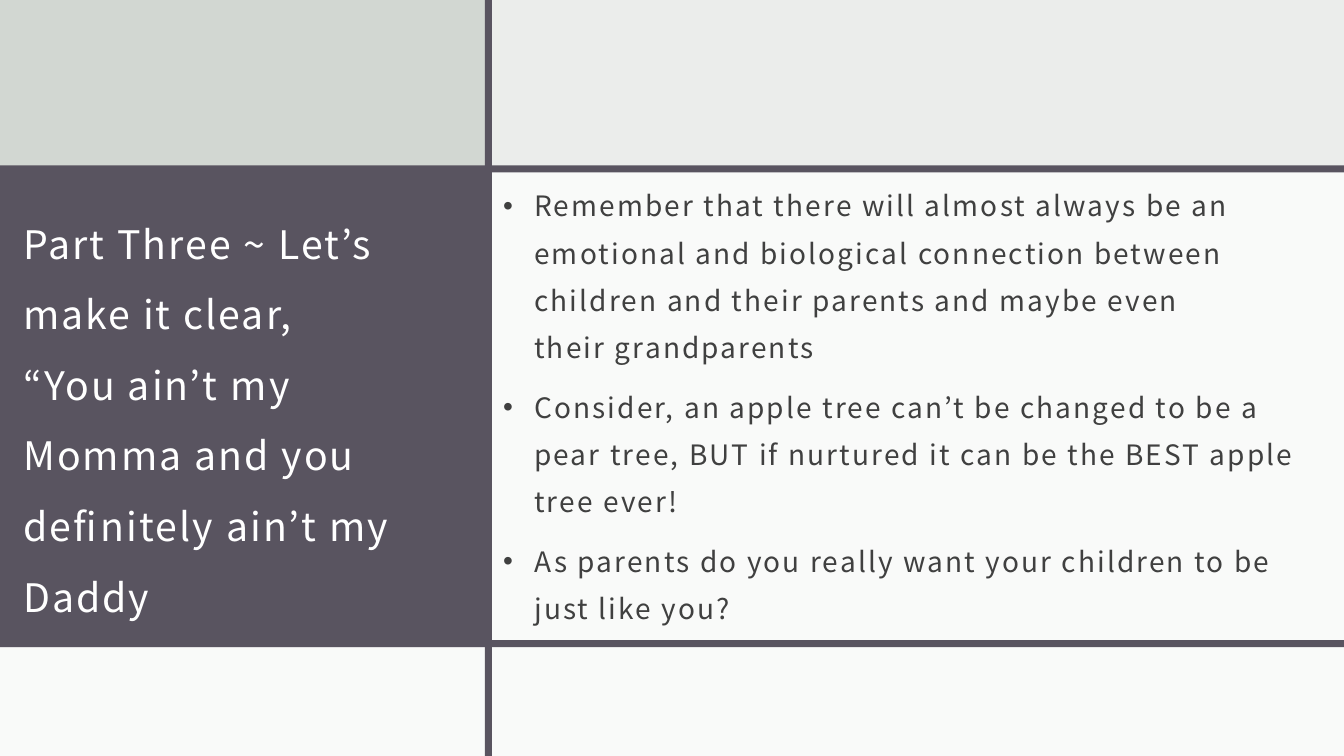
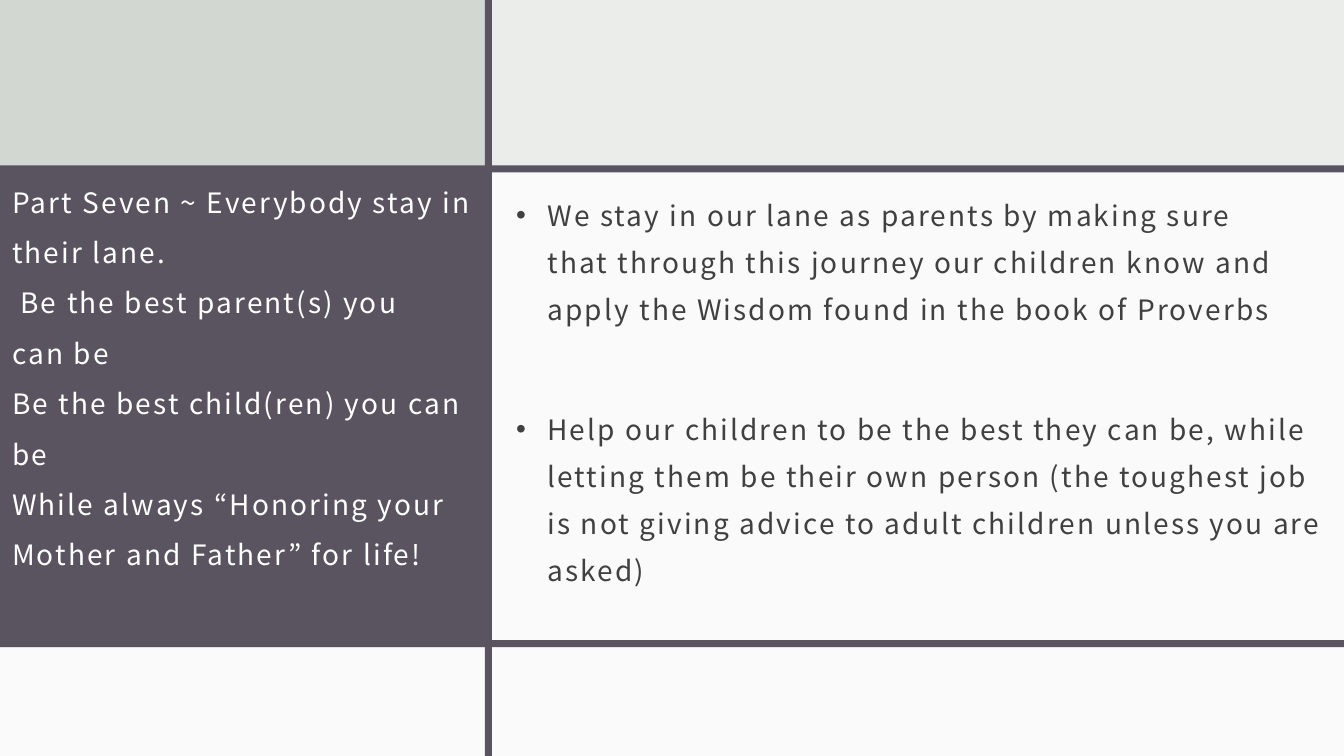
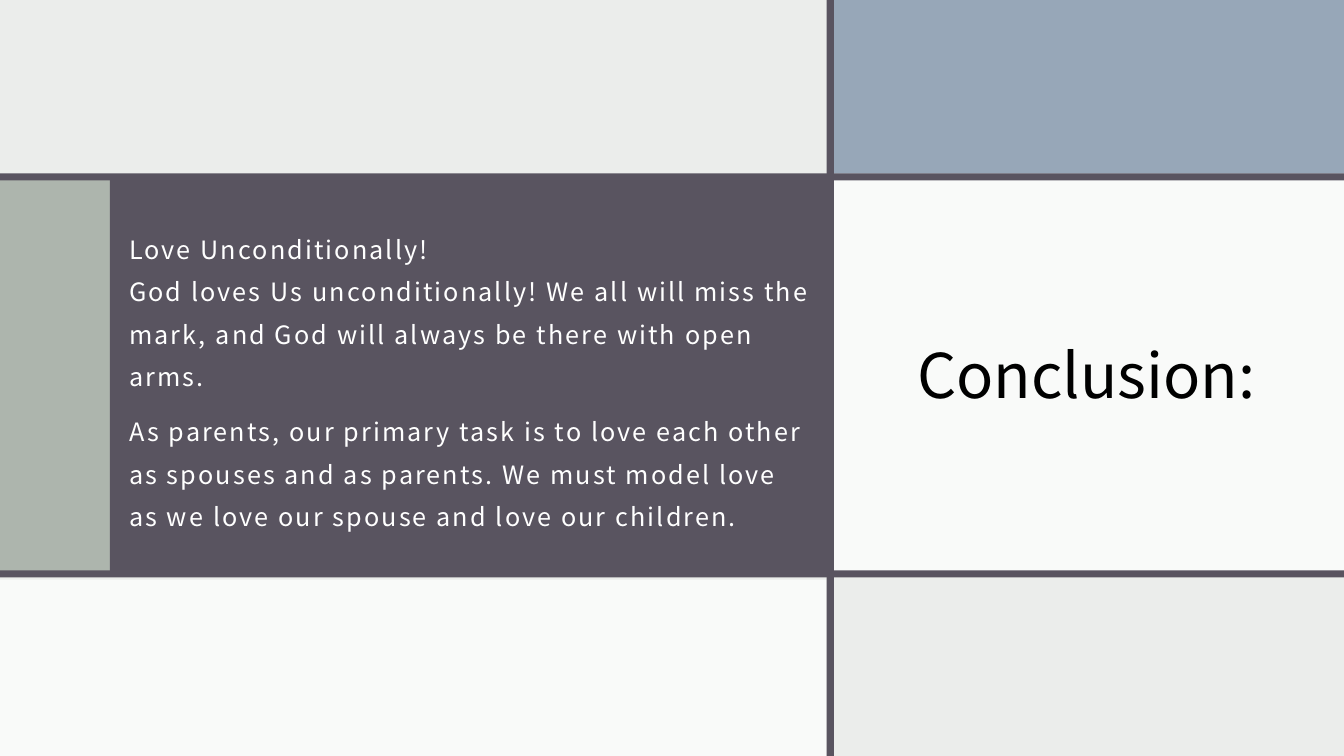
from lxml.etree import SubElement
from pptx import Presentation
from pptx.dml.color import RGBColor
from pptx.enum.shapes import MSO_SHAPE
from pptx.enum.text import MSO_ANCHOR, MSO_AUTO_SIZE, PP_ALIGN
from pptx.oxml.ns import qn
from pptx.util import Inches, Pt

FONT = "Noto Sans CJK JP"
PLUM = RGBColor(0x59, 0x54, 0x60)
MIST = RGBColor(0xEB, 0xED, 0xEB)
PALE = RGBColor(0xD2, 0xD7, 0xD2)
SAGE = RGBColor(0xAD, 0xB5, 0xAD)
BLUE = RGBColor(0x97, 0xA7, 0xB8)
WHITE = RGBColor(0xFF, 0xFF, 0xFF)
GREY = RGBColor(0x40, 0x40, 0x40)
BLACK = RGBColor(0, 0, 0)

WIDE, HIGH, RULE = 13.33, 7.5, 0.07
TIE = "_"  # stands for a no-break space in the wording below

# Each panel: left, top, width, height, colour, opacity in percent
TOPIC = dict(
    panels=[
        (0, 1.64, 4.84, 4.78, PLUM, 100),
        (0, 0, 4.84, 1.66, PALE, 100),
        (4.84, 1.66, 8.49, 4.76, WHITE, 75),
        (0, 6.41, WIDE, 1.09, WHITE, 75),
    ],
    rows=(1.64, 6.35), col=4.81,
)
CLOSE = dict(
    panels=[
        (0, 1.77, 1.09, 3.91, SAGE, 100),
        (1.09, 1.77, 7.16, 3.91, PLUM, 100),
        (8.24, 0, 5.09, 1.78, BLUE, 100),
        (8.27, 1.72, 5.06, 3.98, WHITE, 75),
        (0, 5.75, 8.2, 1.75, WHITE, 75),
    ],
    rows=(1.72, 5.66), col=8.2,
)

SLIDES = [
    dict(
        frame=TOPIC,
        title=["Part Three ~ Let’s make it clear, “You_ain’t_my Momma_and you "
               "definitely_ain’t_my Daddy"],
        place=(0.11, 1.73, 4.61, 4.62), size=28, lead=1.5, before=0,
        points=[
            "Remember that there will almost always be an emotional and "
            "biological connection between children and their parents and "
            "maybe even their_grandparents",
            "Consider, an apple tree can’t be changed to be a pear tree, BUT "
            "if nurtured it can be the BEST apple tree ever!",
            "As parents do you really want your children to be just like you?",
        ],
        body=(4.87, 1.65, 8.37, 4.62), gap=9.3,
    ),
    dict(
        frame=TOPIC,
        title=["Part Seven ~ Everybody stay in their lane.",
               "_Be the best parent(s) you can_be",
               "Be the best child(ren) you can be",
               "While always “Honoring your Mother and Father” for life!"],
        place=(0, 1.5, 4.85, 4.32), size=20, lead=1.5, before=0,
        points=[
            "We stay in our lane as parents by making sure that_through_this "
            "journey our children know and apply the Wisdom found in the book "
            "of Proverbs",
            "Help our children to be the best they can be, while letting "
            "them_be their own person (the toughest job is_not_giving advice "
            "to adult children unless you are asked)",
        ],
        body=(5, 0.83, 8.4, 5.98), gap=52,
    ),
    dict(
        frame=CLOSE,
        title=["Love_Unconditionally! God_loves_Us_unconditionally! We all "
               "will miss the mark, and God will always be there with open "
               "arms.",
               "As parents, our primary task is to love each other as spouses "
               "and as parents. We must model love as_we_love our spouse and "
               "love our children."],
        place=(1.16, 1.88, 7.2, 3.7), size=18, lead=1.4, before=9.3,
        label="Conclusion:", spot=(9, 3.29, 3.83, 0.84),
    ),
]


def block(slide, left, top, width, height, color, alpha=100):
    shape = slide.shapes.add_shape(
        MSO_SHAPE.RECTANGLE, *map(Inches, (left, top, width, height)))
    shape.shadow.inherit = False
    shape.fill.solid()
    shape.fill.fore_color.rgb = color
    shape.line.fill.background()
    if alpha < 100:
        tint = shape.element.find(".//" + qn("a:srgbClr"))
        SubElement(tint, qn("a:alpha")).set("val", str(alpha * 1000))


def style(para, size, color, track=0):
    para.alignment = PP_ALIGN.LEFT
    for run in para.runs:
        run.font.name = FONT
        run.font.size = Pt(size)
        run.font.color.rgb = color
        if track:
            run.font._element.set("spc", str(int(track * 100)))


def fill(shape, lines, size, color, lead, before):
    """Set spaced paragraphs in a middle-anchored text frame."""
    frame = shape.text_frame
    frame.word_wrap = True
    frame.auto_size = MSO_AUTO_SIZE.NONE
    frame.vertical_anchor = MSO_ANCHOR.MIDDLE
    frame.margin_left = frame.margin_right = frame.margin_top = Inches(0.12)
    frame.margin_bottom = Inches(0.1)
    frame.text = "\n".join(lines).replace(TIE, chr(160))
    for para in frame.paragraphs:
        para.line_spacing = lead
        para.space_before = Pt(before)
        style(para, size, color, 1.5)


def bullet(para):
    props = para._p.get_or_add_pPr()
    props.set("marL", str(Inches(0.31)))
    props.set("indent", str(-Inches(0.31)))
    SubElement(props, qn("a:buFont")).set("typeface", "Arial")
    SubElement(props, qn("a:buChar")).set("char", "•")


def backdrop(slide, frame):
    slide.background.fill.solid()
    slide.background.fill.fore_color.rgb = MIST
    for panel in frame["panels"]:
        block(slide, *panel)
    for top in frame["rows"]:
        block(slide, 0, top, WIDE, RULE, PLUM)
    block(slide, frame["col"], 0, RULE, HIGH, PLUM)


def heading(slide, item):
    title = slide.shapes.title
    title.left, title.top, title.width, title.height = map(
        Inches, item["place"])
    fill(title, item["title"], item["size"], WHITE, item["lead"],
         item["before"])
    title.element.getparent().append(title.element)  # in front of the panels


def points(slide, item):
    box = slide.shapes.add_textbox(*map(Inches, item["body"]))
    fill(box, item["points"], 20, GREY, 1.4, 9.3)
    paras = box.text_frame.paragraphs
    for para in paras[1:]:
        para.space_before = Pt(item["gap"])
    for para in paras:
        bullet(para)


def label(slide, item):
    box = slide.shapes.add_textbox(*map(Inches, item["spot"]))
    box.text_frame.word_wrap = True
    box.text_frame.text = item["label"]
    style(box.text_frame.paragraphs[0], 44, BLACK)


def main():
    deck = Presentation()
    deck.slide_width, deck.slide_height = Inches(WIDE), Inches(HIGH)
    for item in SLIDES:
        slide = deck.slides.add_slide(deck.slide_layouts[5])
        backdrop(slide, item["frame"])
        heading(slide, item)
        if "points" in item:
            points(slide, item)
        if "label" in item:
            label(slide, item)
    deck.save("out.pptx")


if __name__ == "__main__":
    main()
